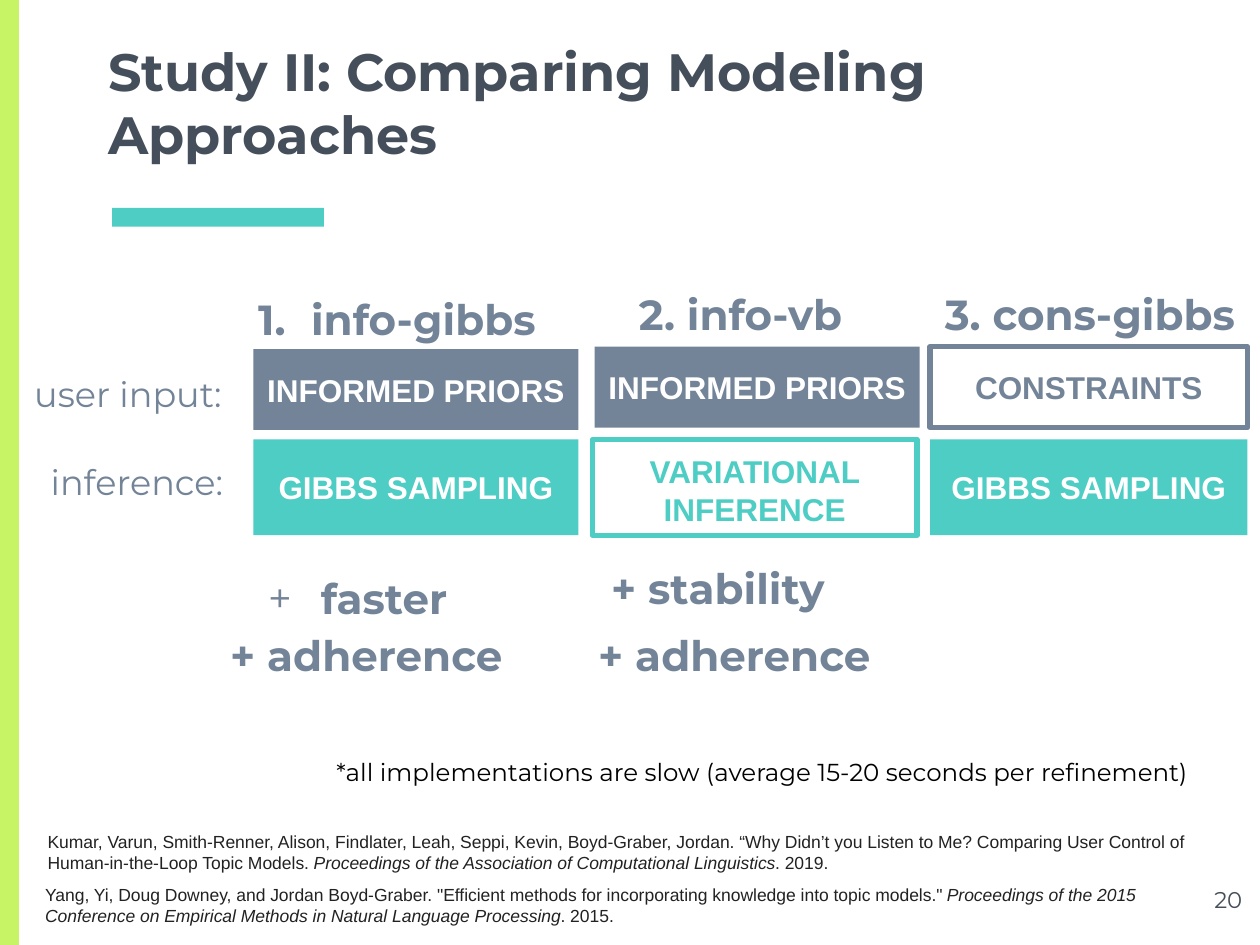
from lxml.etree import SubElement
from pptx import Presentation
from pptx.dml.color import RGBColor
from pptx.enum.shapes import MSO_SHAPE
from pptx.enum.text import MSO_ANCHOR, MSO_AUTO_SIZE, PP_ALIGN
from pptx.oxml.ns import qn
from pptx.util import Cm, Pt

SLATE, TEAL, LIME, DARK, WHITE = "738498", "4ECDC4", "C7F464", "454F5B", "FFFFFF"
HEADING = {"size": 24, "name": "Montserrat", "bold": True, "color": SLATE}
LABEL = {"size": 20, "name": "Montserrat", "color": SLATE}
REFERENCE = {"size": 10, "name": "Arial", "color": "222222"}
NUMBER_BULLET = ("a:buAutoNum", {"type": "arabicPeriod"})
PLUS_BULLET = ("a:buChar", {"char": "+"})


def rgb(value):
    return RGBColor.from_string(value)


def format_run(run, style):
    for name, value in style.items():
        if name == "color":
            run.font.color.rgb = rgb(value)
        else:
            setattr(run.font, name, Pt(value) if name == "size" else value)


def write(shape, runs, style, align=PP_ALIGN.LEFT, anchor=MSO_ANCHOR.TOP):
    frame = shape.text_frame
    settings = {"word_wrap": True, "auto_size": MSO_AUTO_SIZE.NONE, "vertical_anchor": anchor}
    settings |= {f"margin_{side}": Cm(0.25) for side in ("left", "top", "right", "bottom")}
    for name, value in settings.items():
        setattr(frame, name, value)
    paragraph = frame.paragraphs[0]
    paragraph.alignment = align
    for text, extra in runs:
        run = paragraph.add_run()
        run.text = text
        format_run(run, style | extra)
    return paragraph


def add_text(slide, box, text, style, align=PP_ALIGN.LEFT, anchor=MSO_ANCHOR.TOP):
    shape = slide.shapes.add_textbox(*map(Cm, box))
    runs = [(text, {})] if isinstance(text, str) else text
    return write(shape, runs, style, align, anchor)


def add_bullet(paragraph, bullet):
    tag, attributes = bullet
    properties = paragraph._p.get_or_add_pPr()
    properties.set("marL", str(Cm(1.27)))
    properties.set("indent", str(-Cm(1.07)))
    color = SubElement(properties, qn("a:buClr"))
    SubElement(color, qn("a:srgbClr"), val=SLATE)
    SubElement(properties, qn("a:buFont"), typeface="Montserrat")
    SubElement(properties, qn(tag), attributes)


def add_rectangle(slide, box, fill, line=None):
    shape = slide.shapes.add_shape(MSO_SHAPE.RECTANGLE, *map(Cm, box))
    shape.shadow.inherit = False
    shape.fill.solid()
    shape.fill.fore_color.rgb = rgb(fill)
    if line:
        shape.line.color.rgb = rgb(line)
        shape.line.width = Pt(3)
    else:
        shape.line.fill.background()
    return shape


def add_block(slide, box, text, color, outlined=False, anchor=MSO_ANCHOR.MIDDLE):
    fill, line, ink = (WHITE, color, color) if outlined else (color, None, WHITE)
    shape = add_rectangle(slide, box, fill, line)
    style = {"size": 18, "name": "Arial", "bold": True, "color": ink}
    write(shape, [(text, {})], style, PP_ALIGN.CENTER, anchor)


def add_title(slide, box, text):
    title = slide.shapes.title
    for name, value in zip(("left", "top", "width", "height"), box):
        setattr(title, name, Cm(value))
    style = {"size": 30, "name": "Montserrat", "bold": True, "color": DARK}
    write(title, [(text, {})], style, anchor=MSO_ANCHOR.BOTTOM)


def add_approach(slide, box, heading, user_input, inference, benefits):
    left, top, width = box
    text, shift, drop, bullet = heading
    heading_box = (left + shift, top + drop, 6.4, 1.17)
    paragraph = add_text(slide, heading_box, text, HEADING, PP_ALIGN.CENTER)
    if bullet:
        add_bullet(paragraph, bullet)
    add_block(slide, (left, top + 1.43 + drop / 2, width, 1.63), **user_input)
    nudge = -0.05 if inference.get("outlined") else 0
    add_block(slide, (left + nudge, top + 3.3, width, 1.93), **inference)
    for text, shift, drop, bullet in benefits:
        paragraph = add_text(slide, (left + shift, top + drop, 7.52, 1.17), text, HEADING)
        if bullet:
            add_bullet(paragraph, bullet)


def add_row_labels(slide, box):
    left, top, width = box
    for text, shift, drop in (("user input:", 0, 0), ("inference:", 0.18, 1.78)):
        add_text(slide, (left + shift, top + drop, width, 1.17), text, LABEL, PP_ALIGN.CENTER)


def add_references(slide, box):
    left, top, width, height = box
    references = (
        (0.05, 0,
         "Kumar, Varun, Smith-Renner, Alison, Findlater, Leah, Seppi, Kevin, Boyd-Graber, Jordan. "
         "“Why Didn’t you Listen to Me? Comparing User Control of Human-in-the-Loop Topic Models. ",
         "Proceedings of the Association of Computational Linguistics", ". 2019."),
        (0, 1.07,
         "Yang, Yi, Doug Downey, and Jordan Boyd-Graber. "
         "\"Efficient methods for incorporating knowledge into topic models.\" ",
         "Proceedings of the 2015 Conference on Empirical Methods in Natural Language Processing",
         ". 2015."),
    )
    for shift, drop, authors, venue, year in references:
        runs = [(authors, {}), (venue, {"italic": True}), (year, {})]
        add_text(slide, (left + shift, top + drop, width, height), runs, REFERENCE,
                 anchor=MSO_ANCHOR.MIDDLE)


def main():
    presentation = Presentation()
    presentation.slide_width, presentation.slide_height = Cm(25.4), Cm(19.05)
    slide = presentation.slides.add_slide(presentation.slide_layouts[5])
    add_rectangle(slide, (2.26, 4.19, 4.27, 0.38), TEAL)
    add_rectangle(slide, (0, 0, 0.38, 19.05), LIME)
    add_title(slide, (1.93, 0, 21.56, 3.58), "Study II: Comparing Modeling Approaches")

    priors = {"text": "INFORMED PRIORS", "color": SLATE}
    constraints = {"text": "CONSTRAINTS", "color": SLATE, "outlined": True}
    gibbs = {"text": "GIBBS SAMPLING", "color": TEAL}
    variational = {"text": "VARIATIONAL INFERENCE", "color": TEAL, "outlined": True,
                   "anchor": MSO_ANCHOR.TOP}
    add_row_labels(slide, (0.23, 7.26, 4.7))
    add_approach(slide, (5.11, 5.56, 6.55), ("info-gibbs", -0.41, 0.1, NUMBER_BULLET),
                 priors, gibbs,
                 [("faster", -0.16, 5.74, PLUS_BULLET), ("+ adherence", -0.72, 6.89, None)])
    add_approach(slide, (11.99, 5.56, 6.55), ("2. info-vb", -0.26, 0, None),
                 priors, variational,
                 [("+ stability", 0.08, 5.54, None), ("+ adherence", -0.18, 6.89, None)])
    add_approach(slide, (18.75, 5.56, 6.4), ("3. cons-gibbs", 0.02, 0, None),
                 constraints, gibbs, [])

    add_text(slide, (6.53, 15.01, 20.12, 1.68),
             "*all implementations are slow (average 15-20 seconds per refinement)",
             {"size": 14, "name": "Montserrat", "color": "000000"})
    add_references(slide, (0.66, 16.36, 24.36, 1.63))
    add_text(slide, (23.77, 17.6, 1.52, 1.45), "20",
             {"size": 13, "name": "Montserrat", "color": DARK}, PP_ALIGN.RIGHT)
    presentation.save("out.pptx")


if __name__ == "__main__":
    main()
